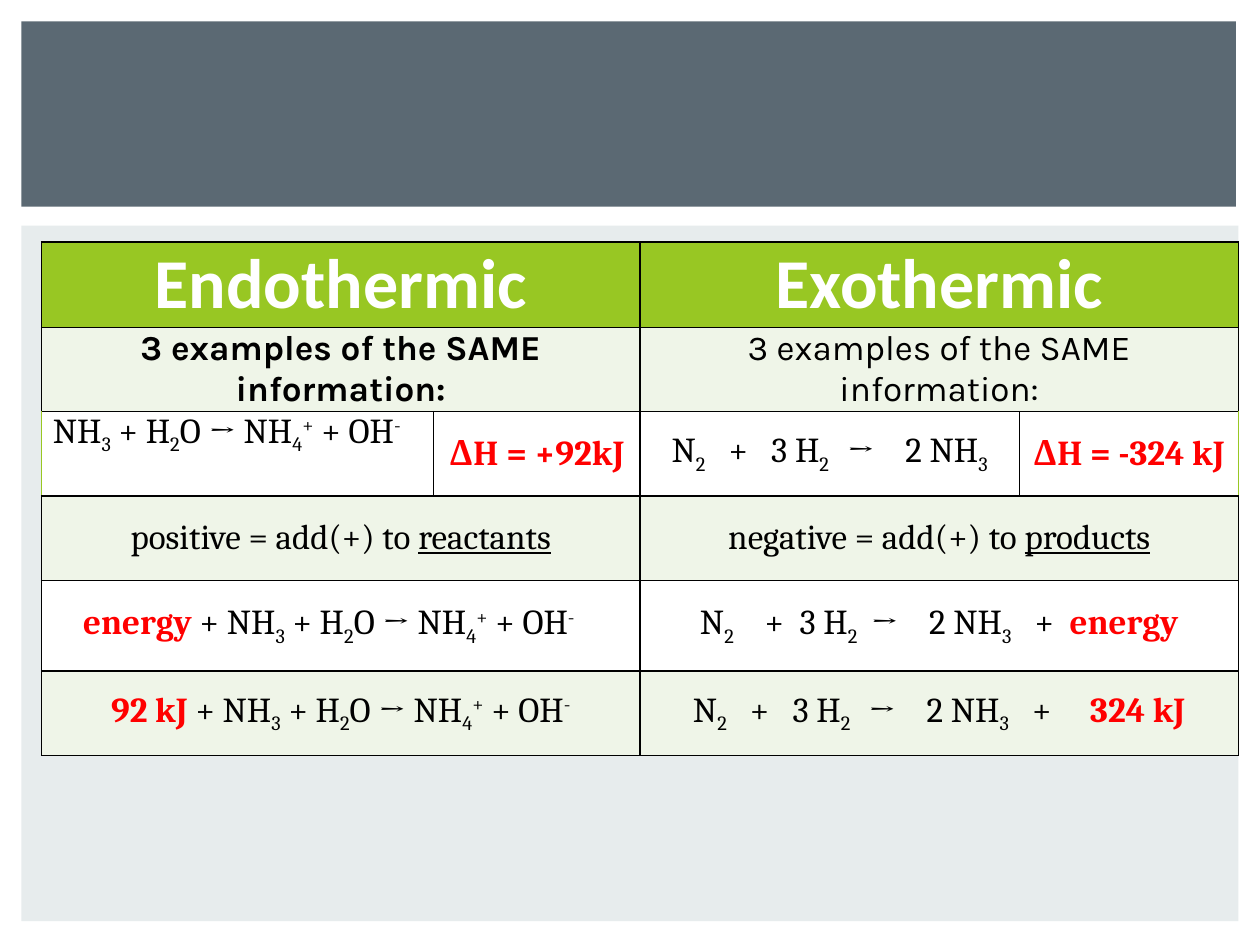
from lxml import etree
from pptx import Presentation, util as u
from pptx.dml.color import RGBColor
from pptx.enum import shapes, text
from pptx.oxml.ns import qn

# Content: each cell is a list of (text, style) runs
COLORS = {"banner": "5B6973", "panel": "E7ECED", "green": "98C723",
          "band": "EFF5E8", "white": "FFFFFF", "black": "000000", "red": "FF0000"}
BASELINES = {"sub": "-25000", "sup": "30000"}
AMMONIUM = [("3", "sub"), (" + H", ""), ("2", "sub"), ("O → NH", ""), ("4", "sub"),
            ("+", "sup"), (" + OH", ""), ("-", "sup")]


def ammonia(plus, gap, tail=()):
    return [("N", ""), ("2", "sub"), (plus, ""), ("2" + gap, "sub"),
            ("→    2 NH", ""), ("3", "sub"), *tail]


EXAMPLES = "3 examples of the SAME information:"
ROWS = [
    [[("Endothermic", "bold")], [("Exothermic", "bold")]],
    [[(EXAMPLES, "bold")], [(EXAMPLES, "")]],
    [[("NH", "")] + AMMONIUM, [("ΔH = +92kJ", "hot")],
     ammonia("   +   3 H", "    "), [("ΔH = -324 kJ", "hot")]],
    [[("positive = add(+) to ", ""), ("reactants", "under")],
     [("negative = add(+) to ", ""), ("products", "under")]],
    [[("energy ", "hot"), ("+ NH", "")] + AMMONIUM,
     ammonia("    +  3 H", "   ", [("   +  ", ""), ("energy", "hot")])],
    [[("92 kJ ", "hot"), ("+ NH", "")] + AMMONIUM,
     ammonia("   +   3 H", "    ", [("   +     ", ""), ("324 kJ", "hot")])],
]
# Font, size, text colour and fill of each row
HEADING = ("Calibri", 40, "white", "green")
INTRO = ("Karla", 20, "black", "band")
PLAIN, BANDED = [("Cambria", 20, "black", fill) for fill in ("white", "band")]
ROW_STYLES = [HEADING, INTRO, PLAIN, BANDED, PLAIN, BANDED]

# Grid, in inches
COLUMNS = [3.11, 1.64, 3.01, 1.74]
HEIGHTS = [0.67, 0.67, 0.67, 0.67, 0.72, 0.67]
LEFT, TOP, INSET = 0.33, 1.92, 0.07
BLOCKS = [("panel", 0.17, 1.79, 9.66, 5.52), ("banner", 0.17, 0.17, 9.64, 1.47)]
SPLIT_ROW, ENERGY_ROW = 2, 4


def color(name):
    return RGBColor.from_string(COLORS[name])


def add_runs(paragraph, runs, font, size, ink):
    for words, style in runs:
        run = paragraph.add_run()
        run.text = words
        run.font.name, run.font.size = font, u.Pt(size)
        run.font.bold = style in ("bold", "hot")
        run.font.underline = style == "under"
        run.font.color.rgb = color("red" if style == "hot" else ink)
        if style in BASELINES:
            run._r.get_or_add_rPr().set("baseline", BASELINES[style])


def set_borders(cell, sides):
    properties = cell._tc.get_or_add_tcPr()
    for position, (side, name) in enumerate(sides.items()):
        line = etree.Element(qn("a:ln" + side), w=str(u.Pt(1)))
        fill = etree.SubElement(line, qn("a:solidFill"))
        etree.SubElement(fill, qn("a:srgbClr"), val=COLORS[name])
        properties.insert(position, line)


def main():
    presentation = Presentation()
    presentation.slide_width, presentation.slide_height = u.Inches(10), u.Inches(7.5)
    slide = presentation.slides.add_slide(presentation.slide_layouts[6])

    # Panel and banner
    for name, *box in BLOCKS:
        shape = slide.shapes.add_shape(shapes.MSO_SHAPE.RECTANGLE, *map(u.Inches, box))
        shape.shadow.inherit = False
        shape.fill.solid()
        shape.fill.fore_color.rgb = color(name)
        shape.line.fill.background()

    # Table grid
    box = map(u.Inches, (LEFT, TOP, sum(COLUMNS), sum(HEIGHTS)))
    table = slide.shapes.add_table(len(HEIGHTS), len(COLUMNS), *box).table
    for column, width in zip(table.columns, COLUMNS):
        column.width = u.Inches(width)
    for row, height in zip(table.rows, HEIGHTS):
        row.height = u.Inches(height)

    # Cells: a row of two entries spans two columns for each
    last = len(COLUMNS) - 1
    for r, (entries, (font, size, ink, fill)) in enumerate(zip(ROWS, ROW_STYLES)):
        span = len(COLUMNS) // len(entries)
        for c in range(len(COLUMNS)):
            cell = table.cell(r, c)
            cell.fill.solid()
            cell.fill.fore_color.rgb = color(fill)
            sides = dict.fromkeys("LRTB", "black")
            if r == SPLIT_ROW and c in (0, last):
                sides["L" if c == 0 else "R"] = "green"
            set_borders(cell, sides)
            cell.vertical_anchor = text.MSO_ANCHOR.MIDDLE
            cell.margin_left = cell.margin_right = u.Inches(INSET)
            cell.margin_top = cell.margin_bottom = 0
            if c % span:
                continue
            if span > 1:
                cell.merge(table.cell(r, c + span - 1))
            paragraph = cell.text_frame.paragraphs[0]
            paragraph.alignment = text.PP_ALIGN.CENTER
            add_runs(paragraph, entries[c // span], font, size, ink)

    # The first equation sits top left, the energy equation left of centre
    first = table.cell(SPLIT_ROW, 0)
    first.vertical_anchor = text.MSO_ANCHOR.TOP
    first.margin_left = u.Inches(0.09)
    first.text_frame.paragraphs[0].alignment = text.PP_ALIGN.LEFT
    table.cell(ENERGY_ROW, 0).margin_right = u.Inches(0.26)

    presentation.save("out.pptx")


if __name__ == "__main__":
    main()
